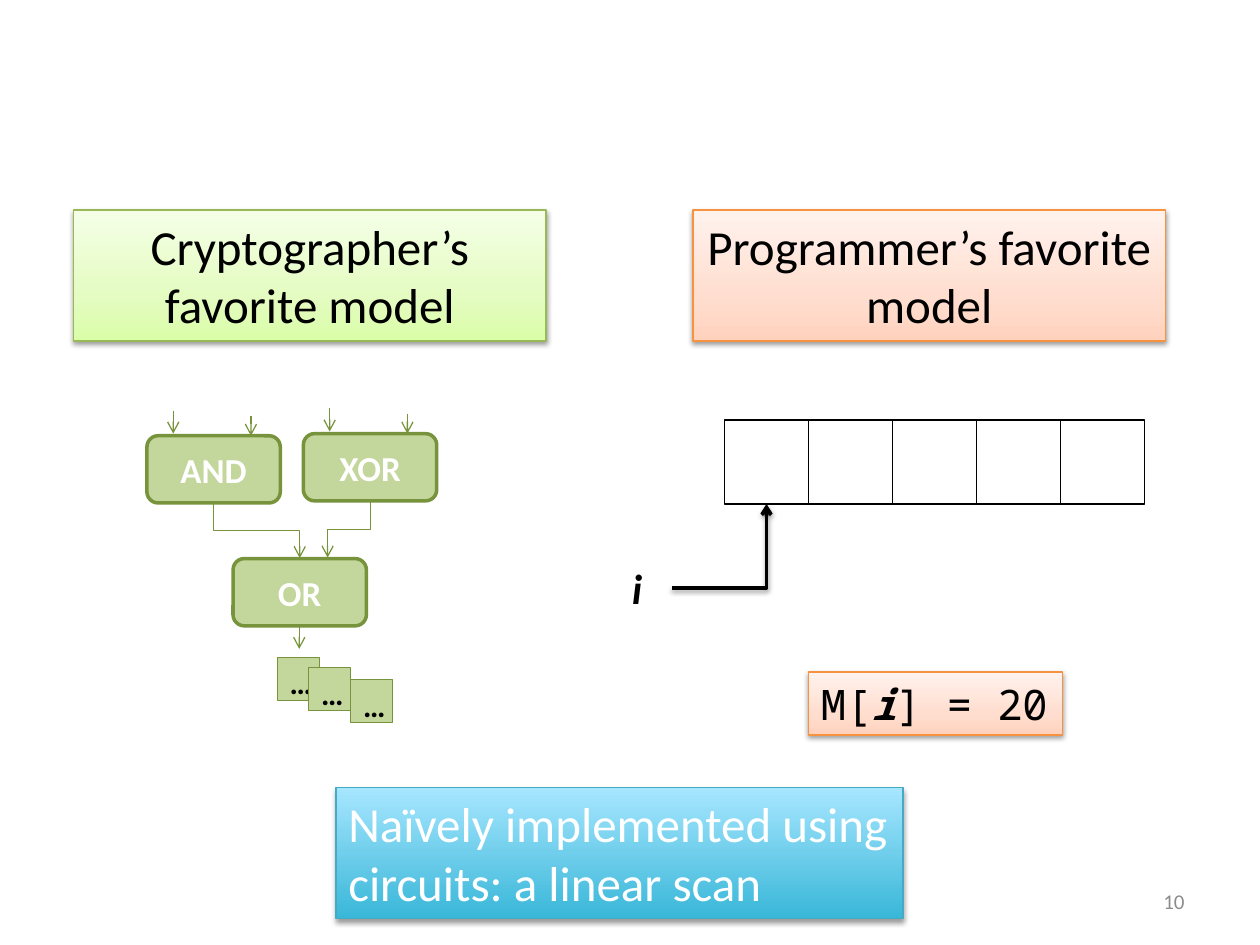
import copy
import dataclasses

import lxml.etree
import pptx
import pptx.dml.color
import pptx.enum.shapes
import pptx.enum.text
import pptx.oxml.ns
import pptx.util

SHAPE = pptx.enum.shapes.MSO_SHAPE
CONNECTOR = pptx.enum.shapes.MSO_CONNECTOR
ALIGN = pptx.enum.text.PP_ALIGN
ANCHOR = pptx.enum.text.MSO_ANCHOR
qn = pptx.oxml.ns.qn


@dataclasses.dataclass(frozen=True)
class Theme:
    black: str = "000000"
    white: str = "FFFFFF"
    grey: str = "8C8C8C"
    gate_fill: str = "C3D69B"
    gate_line: str = "77933C"
    # Each panel: outline colour, then (position, colour) stops from the bottom up
    green: tuple = ("98B955", ((0, "DAFDA7"), (35, "E4FCC2"), (100, "F5FFE7")))
    orange: tuple = ("F69240", ((0, "FFD2BD"), (35, "FFDED0"), (100, "FFF2ED")))
    blue: tuple = ("46AAC5", ((0, "39B7D8"), (100, "A7E6FF")))
    heading: int = 28
    code: int = 24
    gate: int = 20
    dots: int = 18
    number: int = 12
    thin: float = 0.75
    thick: float = 2
    sans: str = "Calibri"
    mono: str = "Noto Sans Mono"


def emu(px):
    return pptx.util.Emu(px * 7620)  # 120 px to the inch


def rgb(value):
    return pptx.dml.color.RGBColor.from_string(value)


class SlideBuilder:
    def __init__(self, slide, theme):
        self.shapes = slide.shapes
        self.theme = theme

    def outline(self, item, color, width):
        item.line.color.rgb = rgb(color)
        item.line.width = pptx.util.Pt(width)

    def shadow(self, item):
        props = item._element.spPr
        effects = props.find(qn("a:effectLst"))
        if effects is None:
            effects = lxml.etree.SubElement(props, qn("a:effectLst"))
        outer = lxml.etree.SubElement(effects, qn("a:outerShdw"), blurRad="39370",
                                      dist="20320", dir="5400000", rotWithShape="0")
        color = lxml.etree.SubElement(outer, qn("a:srgbClr"), val=self.theme.black)
        lxml.etree.SubElement(color, qn("a:alpha"), val="38000")

    def put_text(self, item, runs, size, color, align=ALIGN.LEFT, anchor=ANCHOR.TOP,
                 wrap=True, font=None, **style):
        """Each run is a text and a dict of its own font values."""
        frame = item.text_frame
        for name, value in {"word_wrap": wrap, "vertical_anchor": anchor}.items():
            setattr(frame, name, value)
        paragraph = frame.paragraphs[0]
        paragraph.alignment = align
        base = {"name": font or self.theme.sans, "size": pptx.util.Pt(size), **style}
        for text, extra in runs:
            run = paragraph.add_run()
            run.text = text
            for name, value in {**base, **extra}.items():
                setattr(run.font, name, value)
            run.font.color.rgb = rgb(color)

    def label(self, box, text, size, color, **style):
        item = self.shapes.add_textbox(*map(emu, box))
        self.put_text(item, [(text, {})], size, color, **style)

    def block(self, box, line, width, fill=None, kind=SHAPE.RECTANGLE):
        item = self.shapes.add_shape(kind, *map(emu, box))
        item.shadow.inherit = False
        if fill:
            item.fill.solid()
            item.fill.fore_color.rgb = rgb(fill)
        else:
            item.fill.background()
        self.outline(item, line, width)
        return item

    def panel(self, box, look, runs, size, color, **style):
        line, stops = look
        item = self.block(box, line, self.theme.thin)
        item.fill.gradient()
        item.fill.gradient_angle = 90
        stop_list = item._element.spPr.find(qn("a:gradFill")).find(qn("a:gsLst"))
        while len(stop_list) < len(stops):
            stop_list.append(copy.deepcopy(stop_list[0]))
        for stop, (position, value) in zip(item.fill.gradient_stops, stops):
            stop.position = position / 100
            stop.color.rgb = rgb(value)
        self.shadow(item)
        self.put_text(item, runs, size, color, **style)

    def arrow(self, start, end, color, width, kind=CONNECTOR.STRAIGHT, shadow=False):
        item = self.shapes.add_connector(kind, *map(emu, (*start, *end)))
        self.outline(item, color, width)
        props = item._element.spPr
        lxml.etree.SubElement(props.find(qn("a:ln")), qn("a:tailEnd"), type="arrow")
        if shadow:
            self.shadow(item)
        else:
            lxml.etree.SubElement(props, qn("a:effectLst"))
        return item

    def wire(self, start, end):
        """Elbow that leaves downwards: a level elbow turned about its centre."""
        (x1, y1), (x2, y2) = start, end
        width, height = y2 - y1, abs(x2 - x1)
        left, top = (x1 + x2 - width) // 2, (y1 + y2 - height) // 2
        ends = [(left, top), (left + width, top + height)]
        if x2 > x1:
            ends = [(left + width, top), (left, top + height)]
        item = self.arrow(*ends, self.theme.gate_line, self.theme.thin, CONNECTOR.ELBOW)
        turn = 270 if x2 > x1 else 90
        item._element.spPr.find(qn("a:xfrm")).set("rot", str(turn * 60000))

    def gate(self, left, top, name, arrows):
        """Arrows run between points measured from the gate's corner."""
        theme = self.theme
        item = self.block((left, top, 127, 64), theme.gate_line, theme.thick,
                          theme.gate_fill, SHAPE.ROUNDED_RECTANGLE)
        self.put_text(item, [(name, {})], theme.gate, theme.white, ALIGN.CENTER,
                      ANCHOR.MIDDLE, bold=True)
        for x, y1, y2 in arrows:
            self.arrow((left + x, top + y1), (left + x, top + y2),
                       theme.gate_line, theme.thin)


def main():
    deck = pptx.Presentation()
    deck.slide_width, deck.slide_height = emu(1200), emu(900)
    theme = Theme()
    page = SlideBuilder(deck.slides.add_slide(deck.slide_layouts[6]), theme)

    # Page number
    page.label((860, 834, 280, 48), "10", theme.number, theme.grey,
               align=ALIGN.RIGHT, anchor=ANCHOR.MIDDLE)

    # Circuit
    inputs = [(25, -24, -2), (99, -19, 0)]
    page.gate(140, 415, "AND", inputs)
    page.gate(289, 413, "XOR", inputs)
    page.gate(222, 532, "OR", [(63, 64, 86)])
    page.wire((353, 478), (312, 531))
    page.wire((204, 479), (286, 532))
    for left, top in [(264, 626), (294, 636), (334, 647)]:
        more = page.block((left, top, 40, 41), theme.gate_line, theme.thin, theme.gate_fill)
        page.put_text(more, [("…", {})], theme.dots, theme.black, bold=True)

    # Headings
    for left, look, text in [(70, theme.green, "Cryptographer’s favorite model"),
                             (660, theme.orange, "Programmer’s favorite model")]:
        page.panel((left, 200, 450, 125), look, [(text, {})], theme.heading,
                   theme.black, align=ALIGN.CENTER)

    # Conclusion
    page.panel((320, 750, 540, 125), theme.blue,
               [("Naïvely implemented using circuits: a linear scan", {})],
               theme.heading, theme.white)

    # Memory array with its index
    for cell in range(5):
        page.block((690 + 80 * cell, 400, 80, 80), theme.black, theme.thin)
    pointer = page.arrow((640, 560), (730, 480), theme.black, theme.thick,
                         CONNECTOR.ELBOW, shadow=True)
    pointer._element.spPr.find(qn("a:prstGeom")).set("prst", "bentConnector2")
    page.label((590, 530, 44, 60), "i", theme.code, theme.black,
               wrap=False, bold=True, italic=True)
    page.panel((770, 640, 242, 60), theme.orange,
               [("M[", {}), ("i", {"bold": True, "italic": True}), ("] = 20", {})],
               theme.code, theme.black, wrap=False, font=theme.mono)

    deck.save("out.pptx")


if __name__ == "__main__":
    main()
